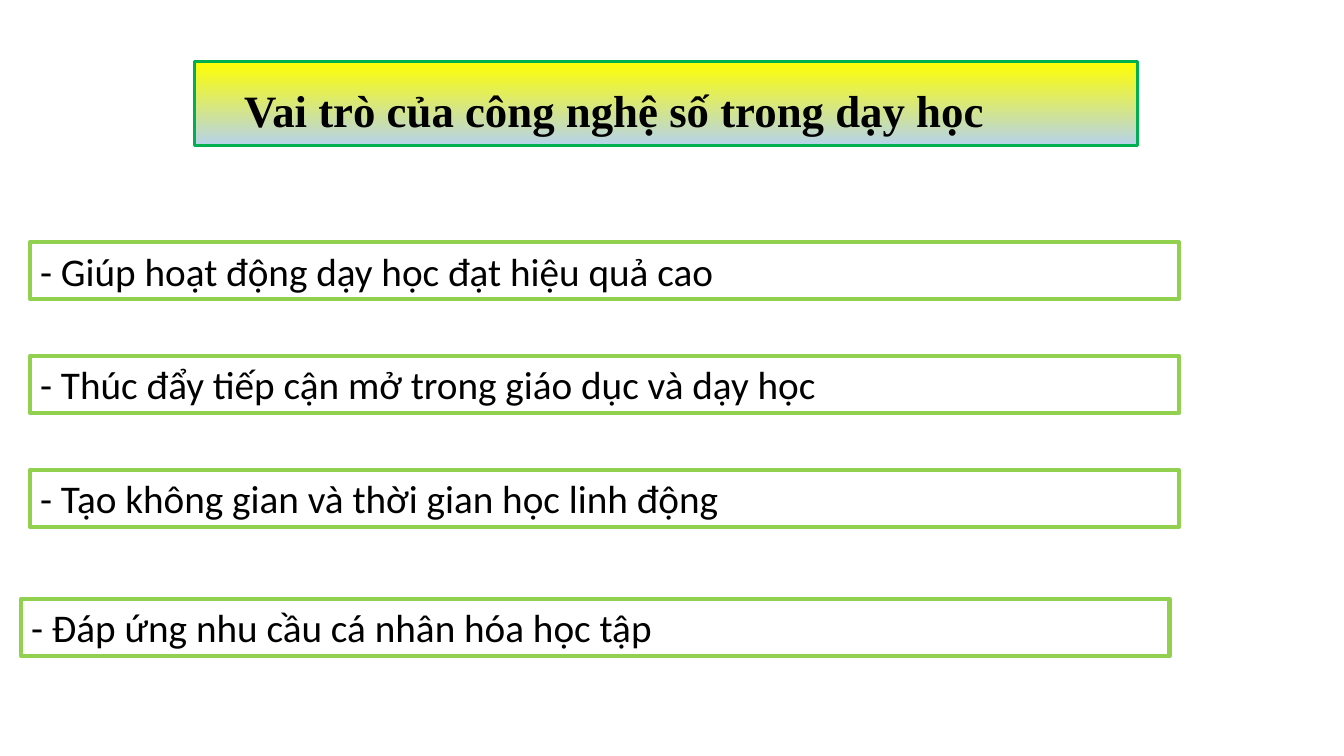
"""Build a slide on the role of digital technology in teaching."""
import pptx
import pptx.dml.color
import pptx.enum.text
import pptx.util

Inches, Pt = pptx.util.Inches, pptx.util.Pt
RGB = pptx.dml.color.RGBColor.from_string
PP = pptx.enum.text
COLORS = {"text": "000000", "yellow": "FFFF00", "blue": "B5D2EC",
          "title_line": "00B050", "box_line": "92D050"}
TITLE_FONT = {"name": "Times New Roman", "size": Pt(32), "bold": True}
BODY_FONT = {"name": "Calibri", "size": Pt(28), "bold": False}
ROLES = [
    (0.3, 2.4, "- Giúp hoạt động dạy học đạt hiệu quả cao"),
    (0.3, 3.53, "- Thúc đẩy tiếp cận mở trong giáo dục và dạy học"),
    (0.3, 4.66, "- Tạo không gian và thời gian học linh động"),
    (0.21, 5.94, "- Đáp ứng nhu cầu cá nhân hóa học tập"),
]


def write_box(sp, text, font, line, width):
    """Outline a box and fill it with one formatted paragraph."""
    sp.line.color.rgb = RGB(COLORS[line])
    sp.line.width = Pt(width)
    tf = sp.text_frame
    tf.word_wrap = True
    tf.auto_size = PP.MSO_AUTO_SIZE.SHAPE_TO_FIT_TEXT
    tf.vertical_anchor = PP.MSO_ANCHOR.TOP
    p = tf.paragraphs[0]
    r = p.add_run()
    r.text = text
    for key, value in font.items():
        setattr(r.font, key, value)
    r.font.color.rgb = RGB(COLORS["text"])
    return p


prs = pptx.Presentation()
prs.slide_width, prs.slide_height = Inches(13.33), Inches(7.5)
s = prs.slides.add_slide(prs.slide_layouts[5])

title = s.shapes.title
title.left, title.top = Inches(1.93), Inches(0.61)
title.width, title.height = Inches(9.35), Inches(0.8)
title.fill.gradient()
title.fill.gradient_angle = 270
for stop, color in zip(title.fill.gradient_stops, ("yellow", "blue")):
    stop.color.rgb = RGB(COLORS[color])
p = write_box(title, "Vai trò của công nghệ số trong dạy học", TITLE_FONT, "title_line", 2.25)
p.alignment = PP.PP_ALIGN.JUSTIFY
p.line_spacing = 1.3
p._p.get_or_add_pPr().set("indent", str(Inches(0.39)))

for left, top, text in ROLES:
    sp = s.shapes.add_textbox(Inches(left), Inches(top), Inches(11.39), Inches(0.57))
    write_box(sp, text, BODY_FONT, "box_line", 3)

prs.save("out.pptx")
